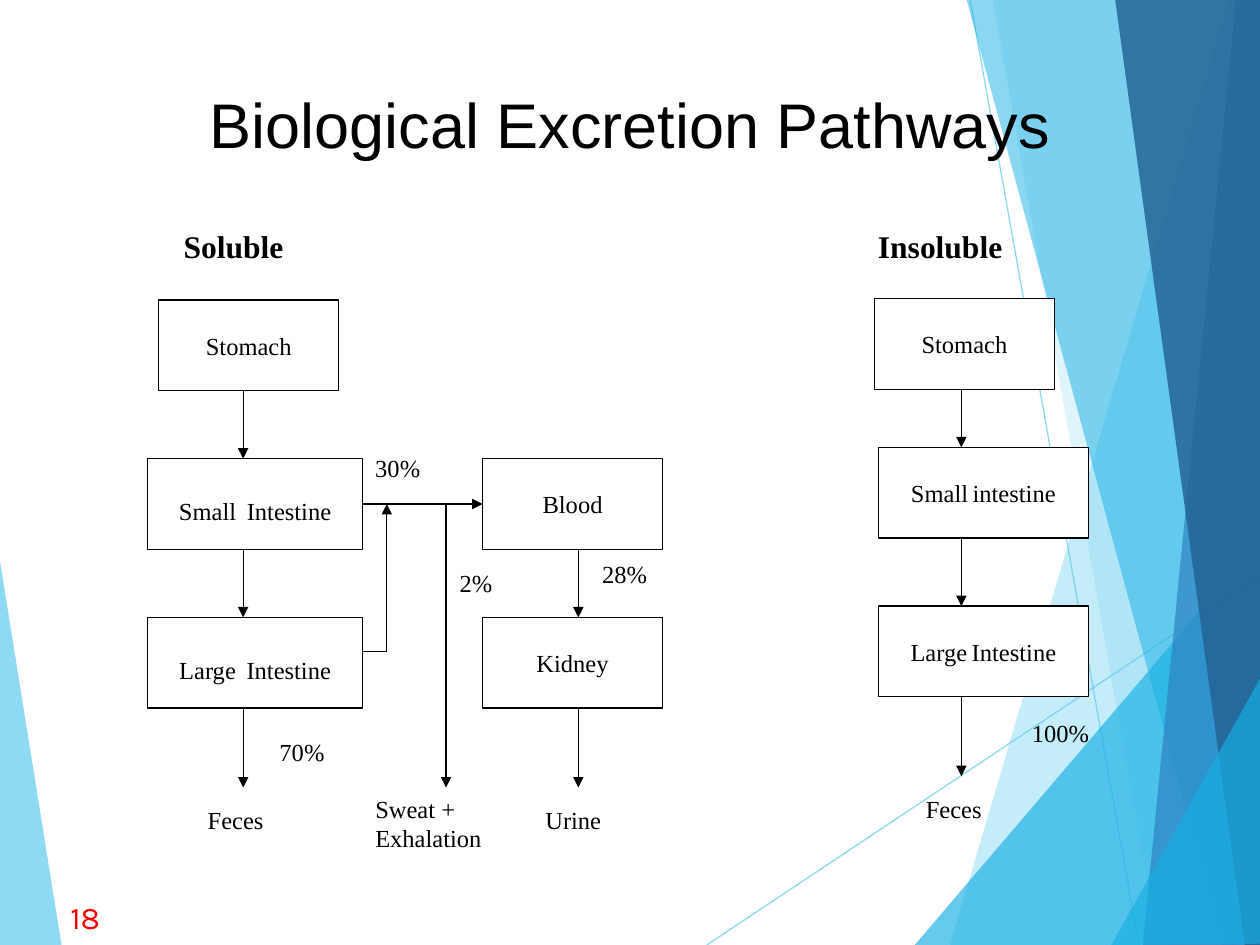
from pptx import Presentation
from pptx.dml.color import RGBColor
from pptx.enum.shapes import MSO_CONNECTOR, MSO_SHAPE
from pptx.enum.text import MSO_ANCHOR, MSO_AUTO_SIZE, PP_ALIGN
from pptx.oxml.ns import qn
from pptx.util import Inches, Pt
from lxml.etree import SubElement

BLACK = RGBColor(0x00, 0x00, 0x00)
WHITE = RGBColor(0xFF, 0xFF, 0xFF)
RED = RGBColor(0xFF, 0x00, 0x00)
SKY = RGBColor(0x5F, 0xCB, 0xEF)
CYAN = RGBColor(0x17, 0xB0, 0xE4)
BLUE = RGBColor(0x2E, 0x83, 0xC3)
NAVY = RGBColor(0x22, 0x62, 0x92)


class SlideBuilder:
    font_name = "Times New Roman"
    font_size = 14
    line_width = Pt(0.75)

    def __init__(self, slide):
        self.slide = slide

    def set_opacity(self, shape, percent):
        for color in shape._element.spPr.iter(qn("a:srgbClr")):
            SubElement(color, qn("a:alpha")).set("val", str(percent * 1000))

    def format_run(self, run, size, font=font_name, color=BLACK, bold=False):
        run.font.name = font
        run.font.size = Pt(size)
        run.font.color.rgb = color
        run.font.bold = bold

    def facet(self, points, color, opacity):
        corners = [(Inches(x), Inches(y)) for x, y in points]
        builder = self.slide.shapes.build_freeform(*corners[0])
        builder.add_line_segments(corners[1:], close=True)
        shape = builder.convert_to_shape()
        shape.shadow.inherit = False
        shape.fill.solid()
        shape.fill.fore_color.rgb = color
        shape.line.fill.background()
        self.set_opacity(shape, opacity)

    def line(self, start, end, color=BLACK, arrow=True):
        connector = self.slide.shapes.add_connector(
            MSO_CONNECTOR.STRAIGHT, *[Inches(value) for value in start + end])
        connector.line.color.rgb = color
        connector.line.width = self.line_width
        if arrow:
            tail = SubElement(connector.line._get_or_add_ln(), qn("a:tailEnd"))
            tail.set("type", "triangle")
        SubElement(connector._element.spPr, qn("a:effectLst"))
        return connector

    def box(self, text, left, top, width, gap_size=None):
        shape = self.slide.shapes.add_shape(
            MSO_SHAPE.RECTANGLE, Inches(left), Inches(top), Inches(width), Inches(0.72))
        shape.shadow.inherit = False
        shape.fill.solid()
        shape.fill.fore_color.rgb = WHITE
        shape.line.color.rgb = BLACK
        shape.line.width = self.line_width
        text_frame = shape.text_frame
        text_frame.word_wrap = False
        text_frame.vertical_anchor = MSO_ANCHOR.MIDDLE
        paragraph = text_frame.paragraphs[0]
        paragraph.alignment = PP_ALIGN.CENTER
        for part in filter(None, text.partition(" ")):
            run = paragraph.add_run()
            run.text = part
            self.format_run(run, gap_size if part == " " else self.font_size)
        return shape

    def label(self, text, left, top, width, height=0.36, size=font_size,
              wrap=False, align=None, **style):
        shape = self.slide.shapes.add_textbox(
            Inches(left), Inches(top), Inches(width), Inches(height))
        text_frame = shape.text_frame
        text_frame.text = text
        text_frame.word_wrap = wrap
        text_frame.auto_size = MSO_AUTO_SIZE.SHAPE_TO_FIT_TEXT
        for paragraph in text_frame.paragraphs:
            paragraph.alignment = align
            for run in paragraph.runs:
                self.format_run(run, size, **style)


def draw_background(builder):
    builder.facet([(-0.01, 4.39), (0.49, 7.51), (-0.01, 7.5)], SKY, 70)
    for start, end in [((5.61, 7.5), (10.01, 4.57)), ((7.7, 0), (9.04, 7.5))]:
        builder.set_opacity(builder.line(start, end, SKY, arrow=False), 70)
    for points, color, opacity in [
        ([(9.75, 0), (7.54, 7.5), (10.02, 7.51), (10.01, 0.01)], SKY, 36),
        ([(7.88, -0.01), (9.19, 7.5), (10.01, 7.5), (10.01, -0.01)], SKY, 20),
        ([(7.26, 7.5), (10, 4.29), (10.01, 7.5)], CYAN, 66),
        ([(7.67, -0.01), (9.7, 7.5), (10.01, 7.49), (10.01, -0.01)], CYAN, 50),
        ([(9.81, -0.01), (9.07, 7.5), (10.01, 7.5), (10, -0.01)], BLUE, 70),
        ([(8.85, -0.01), (9.88, 7.5), (10.02, 7.5), (10, -0.01)], NAVY, 82),
        ([(8.82, 7.5), (10.02, 5.35), (10.02, 7.49)], CYAN, 66),
    ]:
        builder.facet(points, color, opacity)


def draw_pathways(builder):
    builder.box("Stomach", 1.26, 2.38, 1.43)
    builder.box("Large Intestine", 1.17, 4.9, 1.71, 24)
    small_intestine = builder.box("Small Intestine", 1.17, 3.64, 1.71, 24)
    blood = builder.box("Blood", 3.83, 3.64, 1.43)
    builder.box("Kidney", 3.83, 4.9, 1.43)
    builder.box("Large Intestine", 6.97, 4.81, 1.67, 10)
    builder.box("Small intestine", 6.97, 3.55, 1.67, 10)
    builder.box("Stomach", 6.94, 2.37, 1.43)

    for x, spans in [
        (1.93, [(3.1, 3.64), (4.36, 4.9), (5.62, 6.25)]),
        (4.59, [(4.36, 4.9), (5.62, 6.25)]),
        (7.63, [(3.09, 3.55), (4.27, 4.81), (5.53, 6.16)]),
        (3.54, [(4, 6.25)]),
        (3.07, [(5.17, 4)]),
    ]:
        for start, end in spans:
            builder.line((x, start), (x, end))
    builder.line((2.88, 5.17), (3.07, 5.17), arrow=False)
    absorption = builder.line((2.88, 4), (3.83, 4))
    absorption.begin_connect(small_intestine, 3)
    absorption.end_connect(blood, 1)


def draw_labels(builder):
    builder.label("Biological Excretion Pathways", 0.46, 0.63, 9.08, 0.71, 36,
                  wrap=True, align=PP_ALIGN.CENTER, font="Arial")
    builder.label("Soluble", 1.36, 1.75, 1.4, 0.53, 18, wrap=True, bold=True)
    builder.label("Insoluble", 6.87, 1.75, 1.67, 0.53, 18, wrap=True, bold=True)
    for text, left, top, width in [
        ("30%", 2.88, 3.55, 0.64),
        ("70%", 2.12, 5.8, 0.64),
        ("28%", 4.68, 4.39, 0.64),
        ("2%", 3.55, 4.46, 0.52),
        ("100%", 8.09, 5.65, 0.75),
        ("Feces", 1.55, 6.34, 0.74),
        ("Urine", 4.23, 6.34, 0.73),
        ("Feces", 7.25, 6.25, 0.74),
    ]:
        builder.label(text, left, top, width)
    builder.label("Sweat +\nExhalation", 2.88, 6.25, 1.19, 0.61)
    builder.label("18", 0.46, 7.08, 0.54, 0.4, 18, wrap=True, font="Karla", color=RED)


def main():
    presentation = Presentation()
    presentation.slide_width = Inches(10)
    presentation.slide_height = Inches(7.5)
    slide = presentation.slides.add_slide(presentation.slide_layouts[6])
    builder = SlideBuilder(slide)
    draw_background(builder)
    draw_pathways(builder)
    draw_labels(builder)
    presentation.save("out.pptx")


if __name__ == "__main__":
    main()
